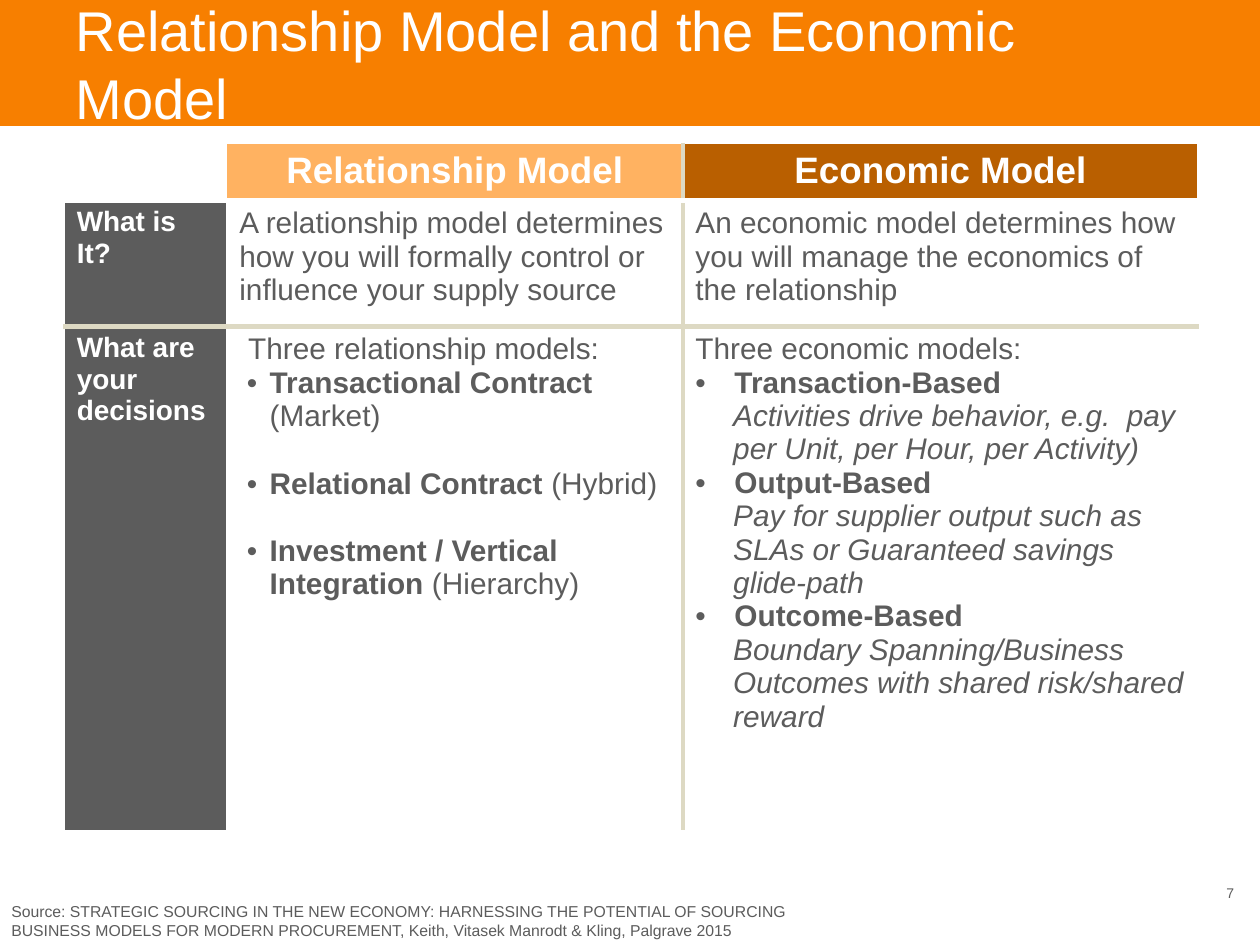
from dataclasses import dataclass

from lxml import etree
from pptx import Presentation
from pptx import util as u
from pptx.dml.color import RGBColor
from pptx.enum import shapes, text
from pptx.oxml.ns import qn


@dataclass(frozen=True)
class Theme:
    font: str = "Arial"
    orange: str = "F77F00"
    light_orange: str = "FFB261"
    dark_orange: str = "B95F00"
    gray: str = "5C5C5C"
    beige: str = "DDD9C3"
    white: str = "FFFFFF"
    title: int = 32
    heading: int = 21
    body: int = 17
    label: int = 16
    source: int = 9
    number: int = 8


THEME = Theme()
LEFT, CENTER = text.PP_ALIGN.LEFT, text.PP_ALIGN.CENTER
TOP, MIDDLE = text.MSO_ANCHOR.TOP, text.MSO_ANCHOR.MIDDLE

# A paragraph is (layout, spans); a span is (words, style letters b and i).
# A layout is (level, left margin, indent, bulleted, points before).
PLAIN = (0, 0, 0, False, 0)
INTRO = (1, 0.07, 0, False, 0)
CONTRACT = (1, 0.24, -0.18, True, 0)
SPACED_CONTRACT = (1, 0.24, -0.18, True, 19.5)
BASIS = (0, 0.31, -0.31, True, 0)
DETAIL = (1, 0.3, 0, False, 0)


def single(words, style="", layout=PLAIN):
    """Return a list of one paragraph that holds one span."""
    return [(layout, [(words, style)])]


RELATIONSHIP_MODELS = single("Three relationship models:", layout=INTRO) + [
    (CONTRACT, [("Transactional Contract ", "b"), ("(Market)", "")]),
    (SPACED_CONTRACT, [("Relational Contract ", "b"), ("(Hybrid)", "")]),
    (SPACED_CONTRACT, [("Investment / Vertical Integration ", "b"), ("(Hierarchy)", "")]),
]
ECONOMIC_MODELS = single("Three economic models:")
for basis, detail in [
    ("Transaction-Based", "Activities drive behavior, e.g.  pay per Unit, per Hour, per Activity)"),
    ("Output-Based", "Pay for supplier output such as SLAs or Guaranteed savings glide-path"),
    ("Outcome-Based", "Boundary Spanning/Business Outcomes with shared risk/shared reward"),
]:
    ECONOMIC_MODELS += single(basis, "b", BASIS) + single(detail, "i", DETAIL)

ROWS = [
    [[], single("Relationship Model", "b"), single("Economic Model", "b")],
    [single("What is It?", "b"),
     single("A relationship model determines how you will formally control or "
            "influence your supply source"),
     single("An economic model determines how you will manage the economics of the relationship")],
    [single("What are your decisions", "b"), RELATIONSHIP_MODELS, ECONOMIC_MODELS],
]
SOURCE = ("Source: STRATEGIC SOURCING IN THE NEW ECONOMY: HARNESSING THE POTENTIAL OF SOURCING "
          "BUSINESS MODELS FOR MODERN PROCUREMENT, Keith, Vitasek Manrodt & Kling, "
          "Palgrave 2015")


class SlideBuilder:
    def __init__(self, page, theme):
        self.page = page
        self.theme = theme

    def format_font(self, font, size, color, style):
        font.name = self.theme.font
        font.size = u.Pt(size)
        font.color.rgb = RGBColor.from_string(color)
        font.bold = "b" in style
        font.italic = "i" in style

    def lay_out(self, para, layout):
        """Set the level, indents, spacing and bullet of a paragraph."""
        level, margin, indent, bulleted, before = layout
        para.level = level
        para.space_before = u.Pt(before)
        properties = para._p.get_or_add_pPr()
        properties.set("marL", str(u.Inches(margin)))
        properties.set("indent", str(u.Inches(indent)))
        if bulleted:
            etree.SubElement(properties, qn("a:buFont"), typeface=self.theme.font)
            etree.SubElement(properties, qn("a:buChar"), char="•")
        else:
            etree.SubElement(properties, qn("a:buNone"))

    def add_paragraphs(self, frame, paragraphs, size, color, align=LEFT):
        for index, (layout, spans) in enumerate(paragraphs):
            para = frame.add_paragraph() if index else frame.paragraphs[0]
            para.alignment = align
            self.lay_out(para, layout)
            for words, style in spans:
                span = para.add_run()
                span.text = words
                self.format_font(span.font, size, color, style)

    def title(self, words, left, top, width, height):
        box = self.page.shapes.title
        box.left, box.top = u.Inches(left), u.Inches(top)
        box.width, box.height = u.Inches(width), u.Inches(height)
        frame = box.text_frame
        frame.auto_size = text.MSO_AUTO_SIZE.NONE
        frame.vertical_anchor = MIDDLE
        self.add_paragraphs(frame, single(words), self.theme.title, self.theme.white)

    def title_band(self, width, height):
        """Draw the coloured band behind the title."""
        band = self.page.shapes.add_shape(
            shapes.MSO_SHAPE.RECTANGLE, 0, 0, u.Inches(width), u.Inches(height))
        band.shadow.inherit = False
        band.fill.solid()
        band.fill.fore_color.rgb = RGBColor.from_string(self.theme.orange)
        band.line.fill.background()
        self.page.shapes.title.element.addprevious(band.element)

    def text_box(self, words, left, top, width, height, size, align=LEFT, anchor=TOP):
        box = self.page.shapes.add_textbox(
            u.Inches(left), u.Inches(top), u.Inches(width), u.Inches(height))
        frame = box.text_frame
        frame.word_wrap = True
        frame.vertical_anchor = anchor
        frame.margin_left = frame.margin_right = u.Inches(0.09)
        frame.margin_top = frame.margin_bottom = u.Inches(0.04)
        self.add_paragraphs(frame, single(words), size, self.theme.gray, align)

    def borders(self, cell, row, column):
        """Rule off the two model columns and the two body rows in beige."""
        beige, white = (self.theme.beige, 3), (self.theme.white, 1)
        under_heading = (self.theme.white, 3)
        sides = {
            "L": beige if column == 2 else white,
            "R": beige if column == 1 else white,
            "T": (white, under_heading, beige)[row],
            "B": (under_heading, beige, white)[row],
        }
        properties = cell._tc.get_or_add_tcPr()
        for side, (color, width) in sides.items():
            line = etree.SubElement(properties, qn(f"a:ln{side}"), w=str(u.Pt(width)))
            fill = etree.SubElement(line, qn("a:solidFill"))
            etree.SubElement(fill, qn("a:srgbClr"), val=color)

    def table(self, rows, left, top, widths, heights):
        theme = self.theme
        table = self.page.shapes.add_table(
            len(heights), len(widths), u.Inches(left), u.Inches(top),
            u.Inches(sum(widths)), u.Inches(sum(heights))).table
        table.first_row = table.horz_banding = False
        for column, width in zip(table.columns, widths):
            column.width = u.Inches(width)
        for row, height in zip(table.rows, heights):
            row.height = u.Inches(height)
        heading_fills = (theme.white, theme.light_orange, theme.dark_orange)
        for r, contents in enumerate(rows):
            for c, paragraphs in enumerate(contents):
                cell = table.cell(r, c)
                self.borders(cell, r, c)
                if r and c:
                    cell.fill.background()
                    self.add_paragraphs(cell.text_frame, paragraphs, theme.body, theme.gray)
                    continue
                cell.fill.solid()
                cell.fill.fore_color.rgb = RGBColor.from_string(
                    theme.gray if r else heading_fills[c])
                self.add_paragraphs(cell.text_frame, paragraphs,
                                    theme.label if r else theme.heading,
                                    theme.white, LEFT if r else CENTER)


def main():
    deck = Presentation()
    deck.slide_width, deck.slide_height = u.Inches(10), u.Inches(7.5)
    builder = SlideBuilder(deck.slides.add_slide(deck.slide_layouts[5]), THEME)
    builder.title_band(10, 1)
    builder.title("Relationship Model and the Economic Model", 0.5, 0.07, 9, 0.86)
    builder.text_box("7", 9.55, 6.94, 0.43, 0.3, THEME.number, CENTER, MIDDLE)
    builder.table(ROWS, 0.51, 1.14, widths=(1.29, 3.62, 4.09), heights=(0.45, 1, 4))
    builder.text_box(SOURCE, 0, 7.12, 6.43, 0.39, THEME.source)
    deck.save("out.pptx")


if __name__ == "__main__":
    main()
